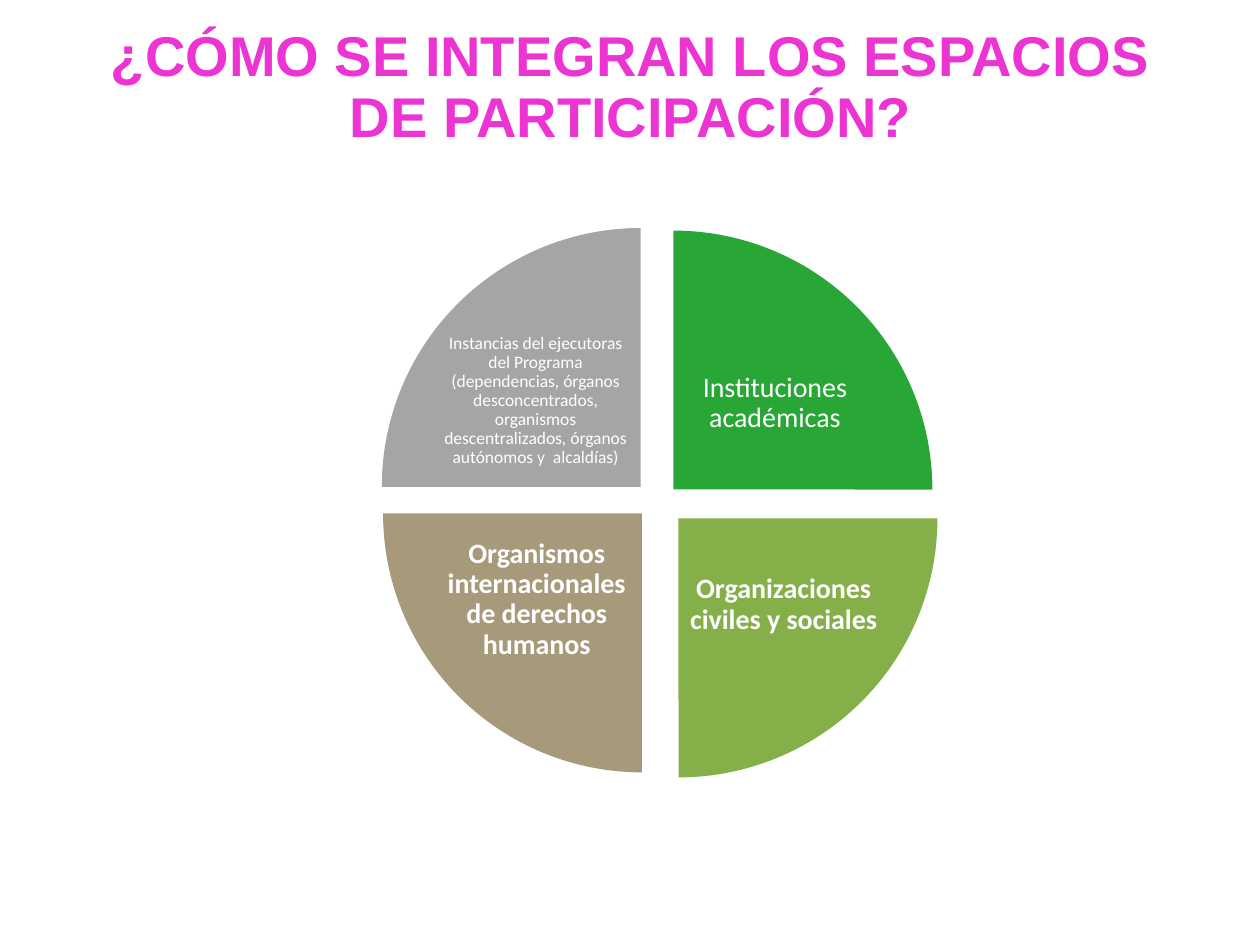
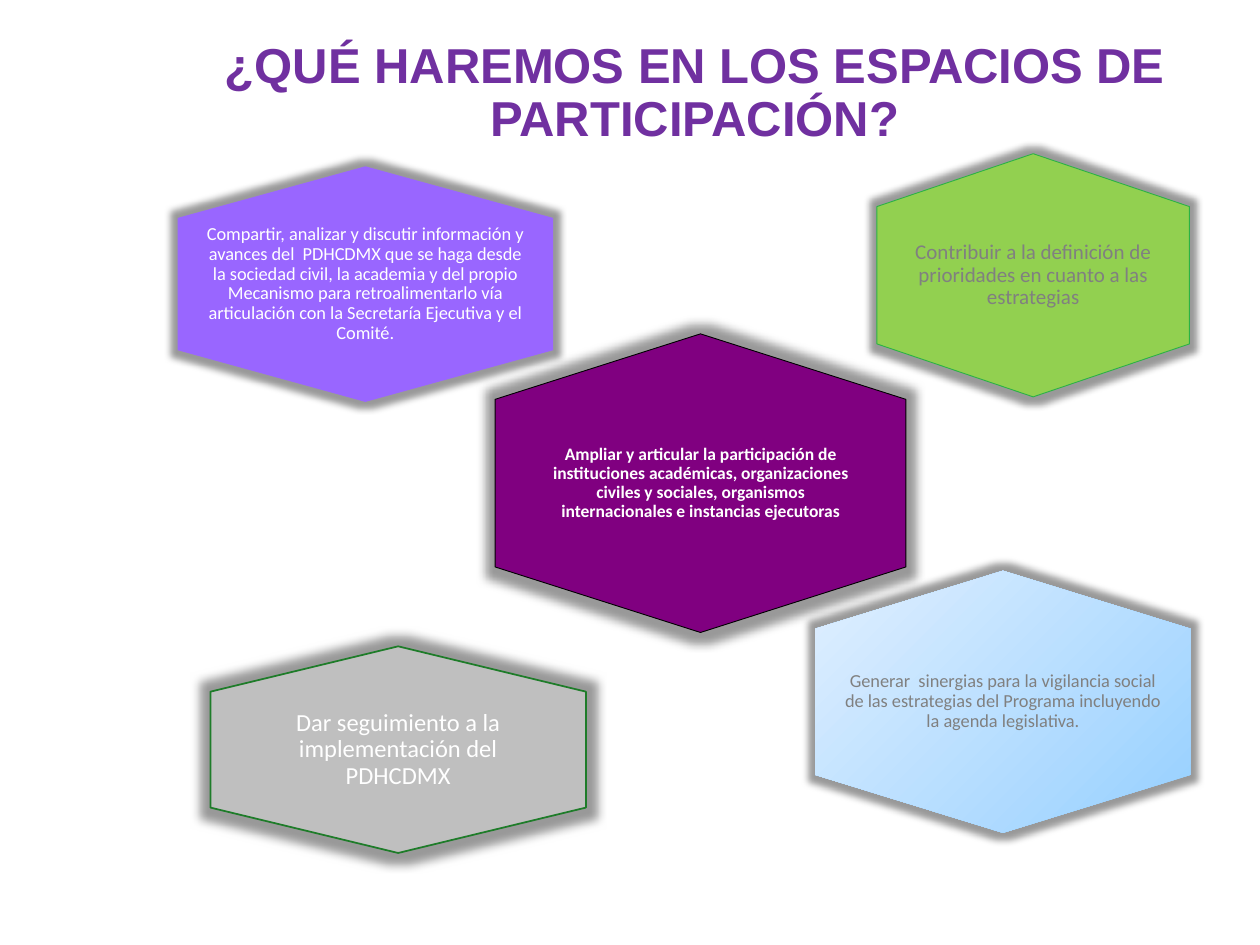
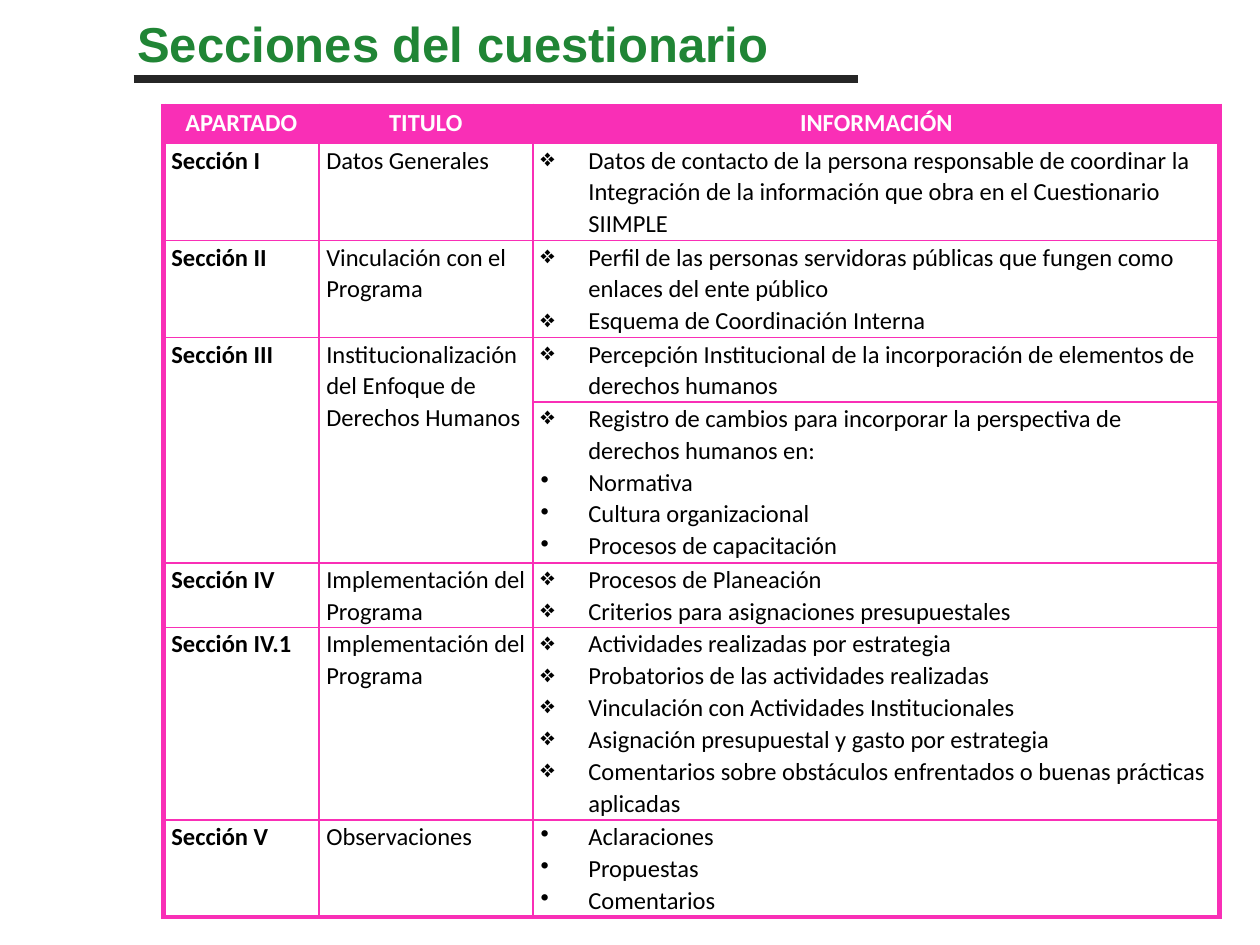
from lxml.etree import SubElement as Sub
from pptx import Presentation
from pptx.dml.color import RGBColor as RGB
from pptx.enum.shapes import MSO_CONNECTOR as LINE, MSO_SHAPE as SHAPE
from pptx.enum.text import MSO_ANCHOR as ANCHOR, PP_ALIGN as ALIGN
from pptx.oxml.ns import qn
from pptx.util import Emu, Pt

PX = 9144  # one hundredth of an inch

WHITE = RGB(0xFF, 0xFF, 0xFF)
BLACK = RGB(0, 0, 0)
INK = RGB(0x26, 0x26, 0x26)
GRAY = RGB(0x80, 0x80, 0x80)
SILVER = RGB(0xBF, 0xBF, 0xBF)
STEEL = RGB(0xA5, 0xA5, 0xA5)
SAND = RGB(0xA7, 0x9A, 0x7A)
GREEN = RGB(0x28, 0xA7, 0x37)
OLIVE = RGB(0x85, 0xAF, 0x49)
LIME = RGB(0x92, 0xD0, 0x50)
MINT = RGB(0x2B, 0xB2, 0x46)
PINE = RGB(0x1E, 0x7C, 0x29)
LEAF = RGB(0x20, 0x85, 0x35)
PINK = RGB(0xEC, 0x34, 0xD2)
ROSE = RGB(0xF9, 0x2F, 0xB6)
VIOLET = RGB(0x70, 0x30, 0xA0)
PLUM = RGB(0x80, 0, 0x80)
LILAC = RGB(0x99, 0x66, 0xFF)
SKY = RGB(0x96, 0xD0, 0xFF)
ICE = RGB(0xE0, 0xEF, 0xFF)

STAR, DOT = "❖", "•"


def emu(*nums):
    return [Emu(round(n * PX)) for n in nums]


class Deck:
    head = "Arial"
    body = "Calibri"

    def __init__(self, wide, high):
        self.prs = Presentation()
        self.prs.slide_width, self.prs.slide_height = emu(wide, high)

    def page(self):
        self.slide = self.prs.slides.add_slide(self.prs.slide_layouts[6])
        self.shapes = self.slide.shapes

    def style(self, para, size, color, bold=False, font=body, align=ALIGN.CENTER, lead=0.9):
        para.alignment = align
        para.line_spacing = lead
        for run in para.runs:
            run.font.name = font
            run.font.size = Pt(size)
            run.font.bold = bold
            run.font.color.rgb = color

    def fill_text(self, frame, text, pad, anchor=ANCHOR.MIDDLE, **look):
        """Put one styled paragraph in a frame; pad is the side and the top inset."""
        frame.word_wrap = True
        frame.vertical_anchor = anchor
        side, top = emu(*pad)
        frame.margin_left = frame.margin_right = side
        frame.margin_top = frame.margin_bottom = top
        frame.text = text
        self.style(frame.paragraphs[0], **look)

    def text(self, box, text, pad, **look):
        self.fill_text(self.shapes.add_textbox(*emu(*box)).text_frame, text, pad, **look)

    def title(self, box, text, size, color, pad=(7, 4), **look):
        self.text(box, text, pad, size=size, color=color, bold=True, font=self.head, **look)

    def pie(self, left, top, size, start, color):
        """Draw a quarter disc; 54 units of angle make a quarter turn."""
        pie = self.shapes.add_shape(SHAPE.PIE, *emu(left, top, size, size))
        pie.adjustments[0] = start
        pie.adjustments[1] = (start + 54) % 216
        pie.shadow.inherit = False
        pie.fill.solid()
        pie.fill.fore_color.rgb = color
        pie.line.fill.background()

    def hexagon(self, box, fill, edge, glow, text, pad, **look):
        """Draw a hexagon; a list as fill gives the two ends of a gradient."""
        left, top, wide, high = box
        mid, right, low = left + wide / 2, left + wide, top + high
        cap = 0.22 * high
        pen = self.shapes.build_freeform(mid, top, PX)
        pen.add_line_segments([(right, top + cap), (right, low - cap), (mid, low),
                               (left, low - cap), (left, top + cap)])
        hexa = pen.convert_to_shape()
        if isinstance(fill, list):
            hexa.fill.gradient()
            hexa.fill.gradient_angle = 135
            for stop, color in zip(hexa.fill.gradient_stops, fill):
                stop.color.rgb = color
        else:
            hexa.fill.solid()
            hexa.fill.fore_color.rgb = fill
        if edge:
            hexa.line.color.rgb, hexa.line.width = edge[0], Pt(edge[1])
        else:
            hexa.line.fill.background()
        self.glow(hexa, glow)
        self.fill_text(hexa.text_frame, text, pad, **look)

    def glow(self, shape, size):
        shape.shadow.inherit = False
        halo = Sub(shape.element.spPr.find(qn("a:effectLst")), qn("a:glow"), rad=str(Pt(size)))
        tint = Sub(halo, qn("a:srgbClr"), val=str(BLACK))
        Sub(tint, qn("a:alpha"), val="40000")

    def rule(self, x1, y1, x2, y2, color, width):
        line = self.shapes.add_connector(LINE.STRAIGHT, *emu(x1, y1, x2, y2))
        line.line.color.rgb, line.line.width = color, Pt(width)
        Sub(line.element.spPr, qn("a:effectLst"))

    def table(self, left, top, cols, rows):
        box = emu(left, top, sum(cols), sum(rows))
        grid = self.shapes.add_table(len(rows), len(cols), *box).table
        grid.first_row = grid.horz_banding = False
        for col, wide in zip(grid.columns, emu(*cols)):
            col.width = wide
        for row, high in zip(grid.rows, emu(*rows)):
            row.height = high
        return grid

    def frame(self, cell, color, widths):
        """Set the left, right, top and bottom borders of a cell."""
        props = cell._tc.get_or_add_tcPr()
        for side, width in zip("LRTB", widths):
            edge = Sub(props, qn(f"a:ln{side}"), w=str(Pt(width)))
            Sub(Sub(edge, qn("a:solidFill")), qn("a:srgbClr"), val=str(color))

    def cell(self, cell, items, fill=None, **look):
        """Fill a cell with (mark, text) pairs; an empty mark means no bullet."""
        cell.margin_left, cell.margin_right, cell.margin_top, cell.margin_bottom = emu(6, 6, 0, 0)
        if fill:
            cell.fill.solid()
            cell.fill.fore_color.rgb = fill
        else:
            cell.fill.background()
        cell.text_frame.text = "\n".join(text for _, text in items)
        for para, (mark, _) in zip(cell.text_frame.paragraphs, items):
            if mark:
                props = para._p.get_or_add_pPr()
                hang = emu(38)[0]
                props.set("marL", str(hang))
                props.set("indent", str(-hang))
                Sub(props, qn("a:buChar"), char=mark)
            self.style(para, 14, lead=1.07, **look)


def spaces(deck):
    deck.page()
    deck.title((52, 14, 897, 113), "¿CÓMO SE INTEGRAN LOS ESPACIOS DE PARTICIPACIÓN?", 32, PINK)
    slices = [
        (329, 183, 162, GREEN, 539, 259, 16, False, "Instituciones académicas"),
        (333, 206, 0, OLIVE, 546, 419, 16, True, "Organizaciones civiles y sociales"),
        (304, 202, 54, SAND, 350, 415, 16, True,
         "Organismos internacionales de derechos humanos"),
        (303, 181, 108, STEEL, 349, 257, 10, False,
         "Instancias del ejecutoras del Programa (dependencias, órganos desconcentrados, "
         "organismos descentralizados, órganos autónomos y  alcaldías)"),
    ]
    for left, top, start, color, x, y, size, bold, text in slices:
        deck.pie(left, top, 411, start, color)
        deck.text((x, y, 152, 122), text, (1, 1), size=size, color=WHITE, bold=bold)


def goals(deck):
    deck.page()
    deck.title((103, 4, 897, 142), "¿QUÉ HAREMOS EN LOS ESPACIOS DE PARTICIPACIÓN?", 28, VIOLET)
    deck.hexagon((393, 265, 326, 237), PLUM, (BLACK, 0.5), 11,
                 "Ampliar y articular la participación de instituciones académicas, "
                 "organizaciones civiles y sociales, organismos internacionales e "
                 "instancias ejecutoras", (38, 42), size=10, color=WHITE, bold=True)
    deck.hexagon((696, 122, 248, 193), LIME, (MINT, 0.5), 8,
                 "Contribuir a la definición de prioridades en cuanto a las estrategias",
                 (29, 32), size=12, color=GRAY)
    deck.hexagon((141, 132, 298, 187), LILAC, None, 8,
                 "Compartir, analizar y discutir información y avances del  PDHCDMX que se "
                 "haga desde la sociedad civil, la academia y del propio Mecanismo para "
                 "retroalimentarlo vía articulación con la Secretaría Ejecutiva y el Comité.",
                 (23, 26), size=10.5, color=WHITE)
    deck.hexagon((167, 513, 298, 164), SILVER, (PINE, 1), 11,
                 "Dar seguimiento a la implementación del PDHCDMX",
                 (27, 30), size=14, color=WHITE)
    deck.hexagon((647, 453, 298, 208), [SKY, ICE], None, 8,
                 "Generar  sinergias para la vigilancia social de las estrategias del "
                 "Programa incluyendo la agenda legislativa.",
                 (23, 26), size=10.5, color=GRAY)


def form(deck):
    deck.page()
    heads = ["APARTADO", "TITULO", "INFORMACIÓN"]
    parts = [
        ("Sección I", "Datos Generales", [
            (STAR, "Datos de contacto de la persona responsable de coordinar la Integración "
                   "de la información que obra en el Cuestionario SIIMPLE")]),
        ("Sección II", "Vinculación con el Programa", [
            (STAR, "Perfil de las personas servidoras públicas que fungen como enlaces del "
                   "ente público"),
            (STAR, "Esquema de Coordinación Interna")]),
        ("Sección III", "Institucionalización del Enfoque de Derechos Humanos", [
            (STAR, "Percepción Institucional de la incorporación de elementos de derechos "
                   "humanos")]),
        ("", "", [
            (STAR, "Registro de cambios para incorporar la perspectiva de derechos humanos en:"),
            (DOT, "Normativa"),
            (DOT, "Cultura organizacional"),
            (DOT, "Procesos de capacitación")]),
        ("Sección IV", "Implementación del Programa", [
            (STAR, "Procesos de Planeación"),
            (STAR, "Criterios para asignaciones presupuestales")]),
        ("Sección IV.1", "Implementación del Programa", [
            (STAR, "Actividades realizadas por estrategia"),
            (STAR, "Probatorios de las actividades realizadas"),
            (STAR, "Vinculación con Actividades Institucionales"),
            (STAR, "Asignación presupuestal y gasto por estrategia"),
            (STAR, "Comentarios sobre obstáculos enfrentados o buenas prácticas aplicadas")]),
        ("Sección V", "Observaciones", [
            (DOT, "Aclaraciones"),
            (DOT, "Propuestas"),
            (DOT, "Comentarios")]),
    ]
    cols, rows = [123, 170, 545], [30, 77, 77, 51, 128, 51, 153, 77]
    grid = deck.table(130, 84, cols, rows)
    for r in range(len(rows)):
        for c in range(len(cols)):
            rims = (c == 0, c == len(cols) - 1, r == 0, r == len(rows) - 1)
            deck.frame(grid.cell(r, c), ROSE, [3 if rim else 1 for rim in rims])
    for c, head in enumerate(heads):
        deck.cell(grid.cell(0, c), [("", head)], ROSE, color=WHITE, bold=True)
    for r, (name, topic, items) in enumerate(parts, 1):
        for c, pairs in enumerate([[("", name)], [("", topic)], items]):
            deck.cell(grid.cell(r, c), pairs, color=BLACK, bold=c == 0, align=ALIGN.LEFT)
    for c in (0, 1):
        grid.cell(3, c).merge(grid.cell(4, c))
    deck.title((99, 6, 582, 57), "Secciones del cuestionario", 28, LEAF, pad=(10, 5),
               anchor=ANCHOR.TOP, align=ALIGN.LEFT, lead=1.0)
    deck.rule(106, 63, 681, 63, INK, 4.5)


def main():
    deck = Deck(1000, 750)
    spaces(deck)
    goals(deck)
    form(deck)
    deck.prs.save("out.pptx")


if __name__ == "__main__":
    main()
